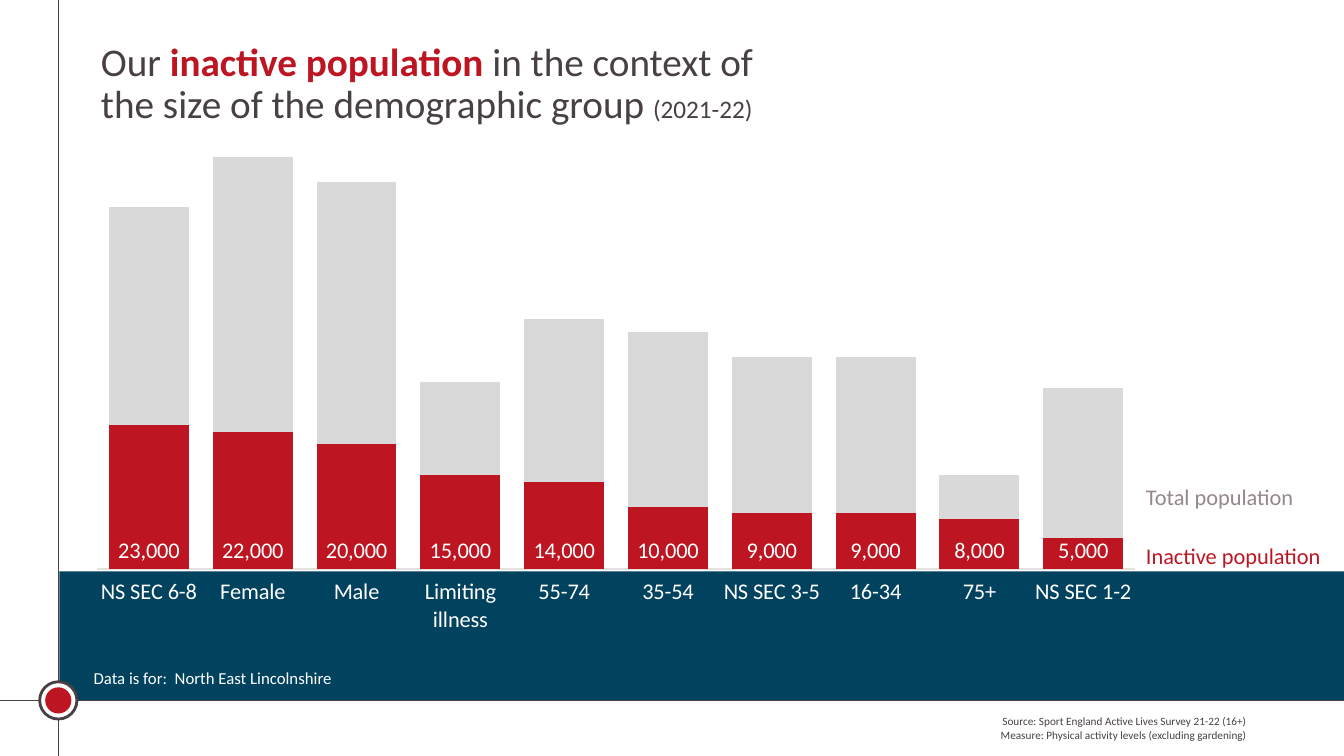
from collections import namedtuple
from lxml import etree
from pptx import Presentation
from pptx.chart.data import CategoryChartData
from pptx.dml.color import RGBColor as RGB
from pptx.enum.chart import XL_CHART_TYPE as ChartType
from pptx.enum.chart import XL_LABEL_POSITION as LabelPosition
from pptx.enum.chart import XL_TICK_LABEL_POSITION as TickLabels
from pptx.enum.chart import XL_TICK_MARK as TickMark
from pptx.enum.shapes import MSO_CONNECTOR as Connector
from pptx.enum.shapes import MSO_SHAPE as Shape
from pptx.enum.text import MSO_ANCHOR as Anchor
from pptx.enum.text import MSO_AUTO_SIZE as AutoSize
from pptx.enum.text import PP_ALIGN as Align
from pptx.oxml import parse_xml
from pptx.oxml.ns import nsdecls, qn
from pptx.util import Cm, Pt

Theme = namedtuple(
    "Theme",
    "font ink red navy white grey muted rule title year label note source",
)
theme = Theme(
    font="Calibri",
    ink=RGB.from_string("484043"),
    red=RGB.from_string("BD1622"),
    navy=RGB.from_string("01425F"),
    white=RGB.from_string("FFFFFF"),
    grey=RGB.from_string("D9D9D9"),
    muted=RGB.from_string("95888D"),
    rule=RGB.from_string("E5E1E3"),
    title=Pt(28),
    year=Pt(18),
    label=Pt(16),
    note=Pt(12),
    source=Pt(8),
)


def style(font, size, color, bold=False):
    font.name = theme.font
    font.size = size
    font.bold = bold
    font.color.rgb = color


def add_run(paragraph, text, size, color, bold=False):
    run = paragraph.add_run()
    run.text = text
    style(run.font, size, color, bold)


deck = Presentation()
deck.slide_width, deck.slide_height = Cm(33.87), Cm(19.05)
slide = deck.slides.add_slide(deck.slide_layouts[5])
shapes = slide.shapes

margin_x, floor_y = 1.47, 17.65

band = shapes.add_shape(Shape.RECTANGLE, Cm(1.5), Cm(14.4), Cm(32.37), Cm(3.25))
band.shadow.inherit = False
band.fill.solid()
band.fill.fore_color.rgb = theme.navy
band.line.fill.background()

for x1, y1, x2, y2 in [
    (margin_x, 0, margin_x, 19.05),
    (0, floor_y, 33.87, floor_y),
]:
    guide = shapes.add_connector(Connector.STRAIGHT, Cm(x1), Cm(y1), Cm(x2), Cm(y2))
    guide.line.color.rgb = theme.ink
    guide.line.width = Pt(0.5)
    etree.SubElement(guide._element.spPr, qn("a:effectLst"))

for radius, fill, outline in [(0.47, theme.white, theme.ink), (0.33, theme.red, None)]:
    dot = shapes.add_shape(
        Shape.OVAL,
        Cm(margin_x - radius),
        Cm(floor_y - radius),
        Cm(2 * radius),
        Cm(2 * radius),
    )
    dot.shadow.inherit = False
    dot.fill.solid()
    dot.fill.fore_color.rgb = fill
    if outline:
        dot.line.color.rgb = outline
        dot.line.width = Pt(2)
    else:
        dot.line.fill.background()

heading = shapes.title
heading.left, heading.top = Cm(2.29), Cm(0.94)
heading.width, heading.height = Cm(18.16), Cm(5.33)
heading_frame = heading.text_frame
heading_frame.word_wrap = True
heading_frame.auto_size = AutoSize.NONE
heading_frame.vertical_anchor = Anchor.TOP
headline = heading_frame.paragraphs[0]
headline.alignment = Align.LEFT
headline.line_spacing = 0.9
headline.space_before = Pt(0)
for text, size, color, bold in [
    ("Our ", theme.title, theme.ink, False),
    ("inactive population ", theme.title, theme.red, True),
    ("in the context of the size of the demographic group ", theme.title, theme.ink, False),
    ("(2021-22)", theme.year, theme.ink, False),
]:
    add_run(headline, text, size, color, bold)

source_lines = [
    "Source: Sport England Active Lives Survey 21-22 (16+)",
    "Measure: Physical activity levels (excluding gardening)",
]
for left, top, width, height, lines, size, color, align in [
    (15.24, 17.88, 16.43, 0.94, source_lines, theme.source, theme.ink, Align.RIGHT),
    (28.63, 13.54, 5, 0.94, ["Inactive population"], theme.label, theme.red, Align.LEFT),
    (28.63, 12.04, 5, 0.94, ["Total population"], theme.label, theme.muted, Align.LEFT),
    (2.11, 16.71, 9.22, 0.76, ["Data is for:  North East Lincolnshire"],
     theme.note, theme.white, Align.LEFT),
]:
    frame = shapes.add_textbox(Cm(left), Cm(top), Cm(width), Cm(height)).text_frame
    frame.word_wrap = True
    for index, line in enumerate(lines):
        paragraph = frame.add_paragraph() if index else frame.paragraphs[0]
        paragraph.alignment = align
        add_run(paragraph, line, size, color)

groups = [
    ("NS SEC 6-8", 23000, 35000),
    ("Female", 22000, 44000),
    ("Male", 20000, 42000),
    ("Limiting illness", 15000, 15000),
    ("55-74", 14000, 26000),
    ("35-54", 10000, 28000),
    ("NS SEC 3-5", 9000, 25000),
    ("16-34", 9000, 25000),
    ("75+", 8000, 7000),
    ("NS SEC 1-2", 5000, 24000),
]
names, inactive, remainder = zip(*groups)
population = CategoryChartData(number_format="#,##0")
population.categories = names
population.add_series("Series 1", inactive)
population.add_series("Series 2", remainder)
chart = shapes.add_chart(
    ChartType.COLUMN_STACKED, Cm(1.47), Cm(2.9), Cm(27.15), Cm(14.02), population
).chart
chart.has_title = False
chart.has_legend = False
style(chart.font, theme.label, theme.white)

group_axis = chart.category_axis
group_axis.major_tick_mark = TickMark.NONE
group_axis.minor_tick_mark = TickMark.NONE
group_axis.tick_label_position = TickLabels.LOW
group_axis.has_major_gridlines = False
group_axis.format.line.color.rgb = theme.rule
group_axis.format.line.width = Pt(0.75)
style(group_axis.tick_labels.font, theme.label, theme.white)

people_axis = chart.value_axis
people_axis.visible = False
people_axis.has_major_gridlines = False
people_axis.minimum_scale, people_axis.maximum_scale = 0, 70000

columns = chart.plots[0]
columns.gap_width, columns.overlap = 30, 100
columns.vary_by_categories = False
for series, color in zip(columns.series, (theme.red, theme.grey)):
    series.format.fill.solid()
    series.format.fill.fore_color.rgb = color

inactive_labels = columns.series[0].data_labels
inactive_labels.show_value = True
inactive_labels.position = LabelPosition.INSIDE_BASE
inactive_labels.number_format = "#,##0"
inactive_labels.number_format_is_linked = False
style(inactive_labels.font, theme.label, theme.white)

plot_area = chart._chartSpace.chart.plotArea
for automatic in plot_area.findall(qn("c:layout")):
    plot_area.remove(automatic)
plot_area.insert(0, parse_xml(
    f'<c:layout {nsdecls("c")}><c:manualLayout><c:layoutTarget val="inner"/>'
    '<c:xMode val="edge"/><c:yMode val="edge"/><c:x val="0.036"/><c:y val="0.03"/>'
    '<c:w val="0.964"/><c:h val="0.786"/></c:manualLayout></c:layout>'
))

deck.save("out.pptx")
